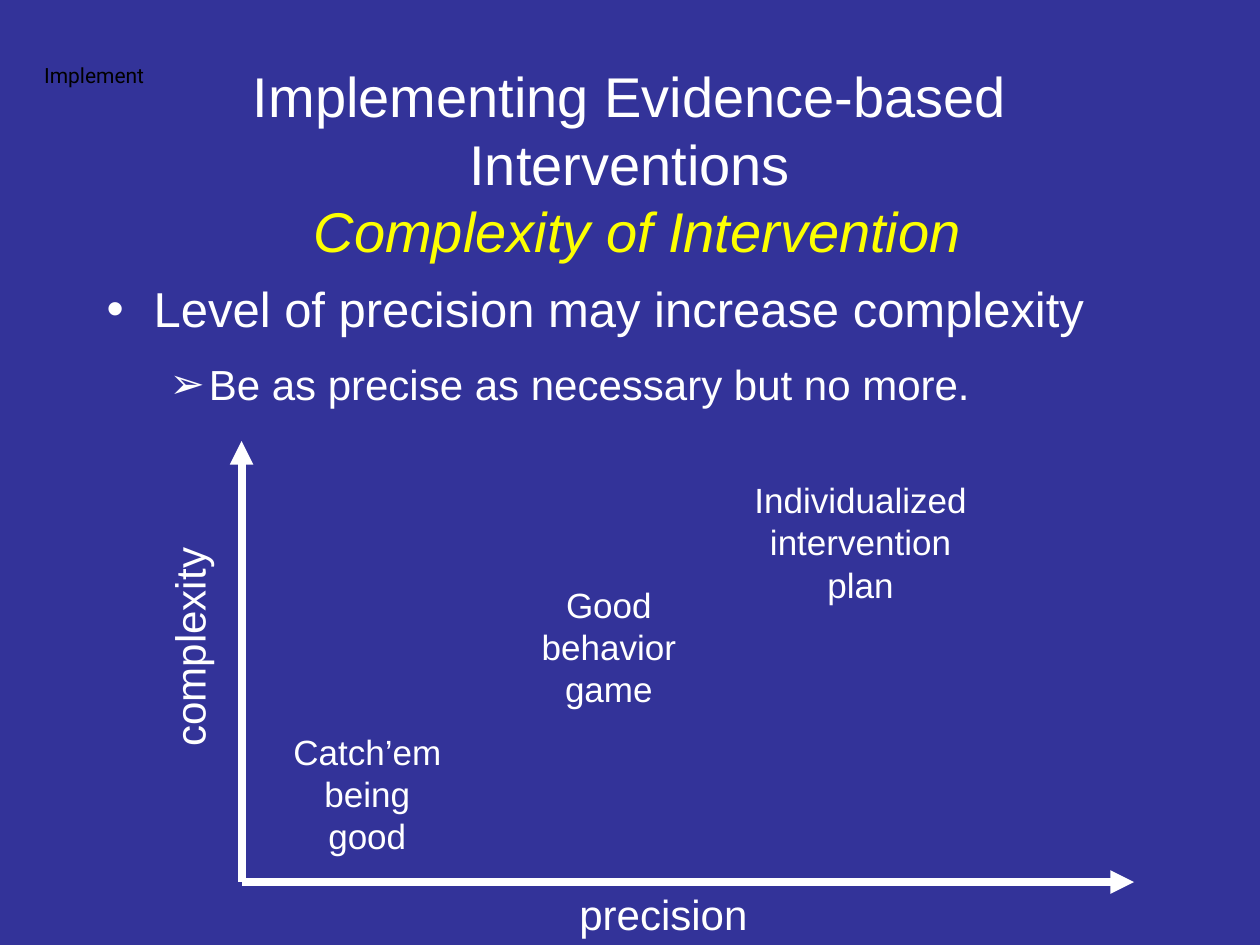
from lxml.etree import SubElement
from pptx import Presentation
from pptx.dml.color import RGBColor
from pptx.enum.shapes import MSO_CONNECTOR
from pptx.enum.text import MSO_ANCHOR, PP_ALIGN
from pptx.oxml.ns import qn
from pptx.util import Cm, Pt

WHITE = "FFFFFF"
YELLOW = "FDFF01"
BLACK = "000000"
NAVY = "333399"


def shade(code):
    return RGBColor.from_string(code)


class Deck:
    font = "Arial"

    def __init__(self):
        self.file = Presentation()
        self.file.slide_width = Cm(25.4)
        self.file.slide_height = Cm(19.05)
        self.slide = self.file.slides.add_slide(self.file.slide_layouts[6])
        fill = self.slide.background.fill
        fill.solid()
        fill.fore_color.rgb = shade(NAVY)

    def frame(self, left, top, width, height, turn=0):
        box = self.slide.shapes.add_textbox(Cm(left), Cm(top), Cm(width), Cm(height))
        box.rotation = turn
        box.text_frame.word_wrap = True
        return box.text_frame

    def run(self, para, text, size, color=WHITE, font=None, slant=None):
        run = para.add_run()
        run.text = text
        run.font.size = Pt(size)
        run.font.name = font or self.font
        run.font.color.rgb = shade(color)
        run.font.italic = slant

    def label(self, text, spot, size, center=True, turn=0, **style):
        para = self.frame(*spot, turn=turn).paragraphs[0]
        para.alignment = PP_ALIGN.CENTER if center else PP_ALIGN.LEFT
        self.run(para, text, size, **style)

    def title(self, main, sub, spot):
        frame = self.frame(*spot)
        frame.vertical_anchor = MSO_ANCHOR.MIDDLE
        para = frame.paragraphs[0]
        para.alignment = PP_ALIGN.CENTER
        self.run(para, main, 32)
        para.add_line_break()
        self.run(para, " ", 32)
        self.run(para, sub, 32, YELLOW, slant=True)

    def bullet(self, para, mark, text, size, left, hang, gap=0, level=0):
        para.level = level
        para.space_before = Pt(gap)
        props = para._p.get_or_add_pPr()
        props.set("marL", str(Cm(left)))
        props.set("indent", str(-Cm(hang)))
        tint = SubElement(props, qn("a:buClr"))
        SubElement(tint, qn("a:srgbClr")).set("val", WHITE)
        SubElement(props, qn("a:buFont")).set("typeface", self.font)
        SubElement(props, qn("a:buChar")).set("char", mark)
        self.run(para, text, size)

    def arrow(self, start, stop, end):
        points = [Cm(value) for value in (*start, *stop)]
        axis = self.slide.shapes.add_connector(MSO_CONNECTOR.STRAIGHT, *points)
        axis.line.color.rgb = shade(WHITE)
        axis.line.width = Pt(4.5)
        SubElement(axis.line._get_or_add_ln(), qn(end)).set("type", "triangle")
        SubElement(axis._element.spPr, qn("a:effectLst"))

    def save(self):
        self.file.save("out.pptx")


def main():
    deck = Deck()
    deck.title("Implementing Evidence-based Interventions",
               "Complexity of Intervention", (1.9, 1.69, 21.6, 3.18))

    body = deck.frame(1.9, 5.5, 21.6, 11.43)
    deck.bullet(body.paragraphs[0], "•",
                "Level of precision may increase complexity", 28, 0.95, 0.95)
    deck.bullet(body.add_paragraph(), "➢",
                "Be as precise as necessary but no more.", 24, 2.06, 0.79,
                gap=12, level=1)

    deck.label("Implement", (0.21, 1.14, 3.38, 0.76), 12, color=BLACK, font="Roboto")

    origin = (4.87, 17.78)
    deck.arrow((4.87, 8.89), origin, "a:headEnd")
    deck.arrow(origin, (22.86, 17.78), "a:tailEnd")
    deck.label("complexity", (1.55, 12.4, 4.52, 1.27), 24, center=False, turn=270)
    deck.label("precision", (11.43, 17.78, 3.89, 1.27), 24, center=False)

    steps = [
        ("Catch’em being good", 5.5, 14.6, 3.81),
        ("Good behavior game", 10.58, 11.64, 3.39),
        ("Individualized intervention plan", 14.81, 9.53, 5.08),
    ]
    for text, left, top, width in steps:
        deck.label(text, (left, top, width, 2.79), 20)
    deck.save()


if __name__ == "__main__":
    main()
